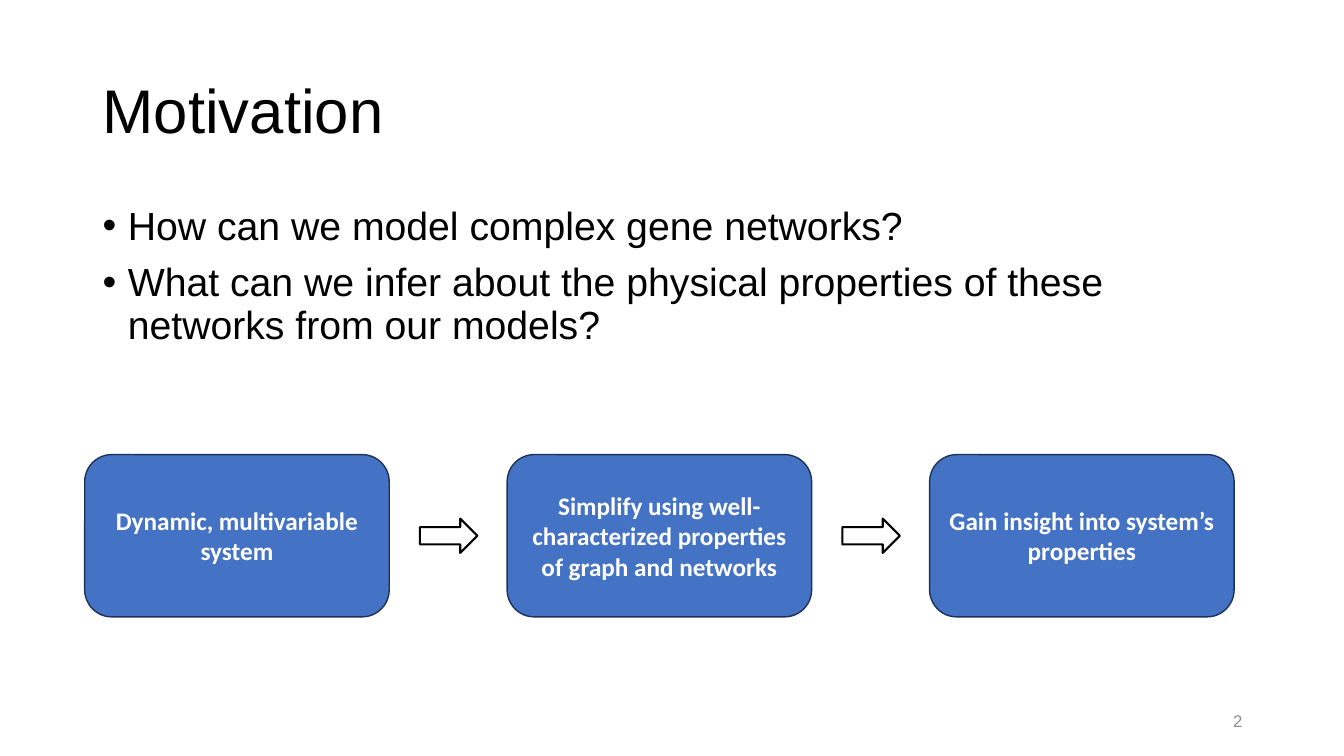
import pptx
import pptx.util
import pptx.dml.color
import pptx.enum.shapes
import pptx.enum.text
import pptx.oxml.ns
import lxml.etree

Inches = pptx.util.Inches
Pt = pptx.util.Pt
RGBColor = pptx.dml.color.RGBColor
SHAPE = pptx.enum.shapes.MSO_SHAPE
ALIGN = pptx.enum.text.PP_ALIGN
ANCHOR = pptx.enum.text.MSO_ANCHOR

BLACK = RGBColor(0x00, 0x00, 0x00)
WHITE = RGBColor(0xFF, 0xFF, 0xFF)
BLUE = RGBColor(0x44, 0x72, 0xC4)
NAVY = RGBColor(0x1E, 0x32, 0x56)
GRAY = RGBColor(0x8C, 0x8C, 0x8C)


class Deck:
    heading_font = "Arial"
    box_font = "Calibri"

    def __init__(self):
        self.prs = pptx.Presentation()
        self.prs.slide_width = Inches(13.33)
        self.prs.slide_height = Inches(7.5)
        self.s = self.prs.slides.add_slide(self.prs.slide_layouts[6])

    def style(self, p, font, size, color, bold=False):
        p.font.name = font
        p.font.size = Pt(size)
        p.font.color.rgb = color
        p.font.bold = bold

    def text(self, x, y, w, h, lines, size, color=BLACK, align=ALIGN.LEFT,
             anchor=ANCHOR.MIDDLE, spacing=1.0, bullets=False):
        sp = self.s.shapes.add_textbox(Inches(x), Inches(y), Inches(w), Inches(h))
        tf = sp.text_frame
        tf.word_wrap = True
        tf.vertical_anchor = anchor
        tf.text = "\n".join(lines)
        for p in tf.paragraphs:
            p.alignment = align
            p.line_spacing = spacing
            self.style(p, self.heading_font, size, color)
            if bullets:
                self.bullet(p)

    def bullet(self, p):
        p.space_before = Pt(10)
        pPr = p._p.get_or_add_pPr()
        pPr.set("marL", str(Inches(0.25)))
        pPr.set("indent", str(Inches(-0.25)))
        font = lxml.etree.Element(pptx.oxml.ns.qn("a:buFont"), typeface="Arial")
        char = lxml.etree.Element(pptx.oxml.ns.qn("a:buChar"), char="•")
        pPr.find(pptx.oxml.ns.qn("a:spcBef")).addnext(font)
        font.addnext(char)

    def shape(self, kind, x, y, w, h, line, width):
        sp = self.s.shapes.add_shape(kind, Inches(x), Inches(y), Inches(w), Inches(h))
        sp.shadow.inherit = False
        sp.line.color.rgb = line
        sp.line.width = Pt(width)
        return sp

    def box(self, x, y, w, h, text):
        sp = self.shape(SHAPE.ROUNDED_RECTANGLE, x, y, w, h, NAVY, 1)
        sp.fill.solid()
        sp.fill.fore_color.rgb = BLUE
        tf = sp.text_frame
        tf.word_wrap = True
        tf.vertical_anchor = ANCHOR.MIDDLE
        tf.text = text
        p = tf.paragraphs[0]
        p.alignment = ALIGN.CENTER
        self.style(p, self.box_font, 18, WHITE, True)

    def arrow(self, x, y, w, h):
        sp = self.shape(SHAPE.DOWN_ARROW, x, y, w, h, BLACK, 1.5)
        sp.rotation = 270
        sp.fill.background()


def main():
    d = Deck()
    d.text(0.92, 0.4, 11.5, 1.45, ["Motivation"], 44, spacing=0.9)
    d.text(0.92, 2, 11.5, 4.76, [
        "How can we model complex gene networks?",
        "What can we infer about the physical properties of these networks from our models?",
    ], 28, anchor=ANCHOR.TOP, spacing=0.9, bullets=True)

    steps = [
        "Dynamic, multivariable system",
        "Simplify using well-characterized properties of graph and networks",
        "Gain insight into system’s properties",
    ]
    left, pitch = 0.84, 4.19
    for i, step in enumerate(steps):
        d.box(left + i * pitch, 4.51, 3.02, 1.61, step)
    for i in range(len(steps) - 1):
        d.arrow(4.28 + i * pitch, 5.03, 0.34, 0.57)

    d.text(9.42, 6.95, 3, 0.4, ["2"], 12, GRAY, ALIGN.RIGHT)
    d.prs.save("out.pptx")


if __name__ == "__main__":
    main()
